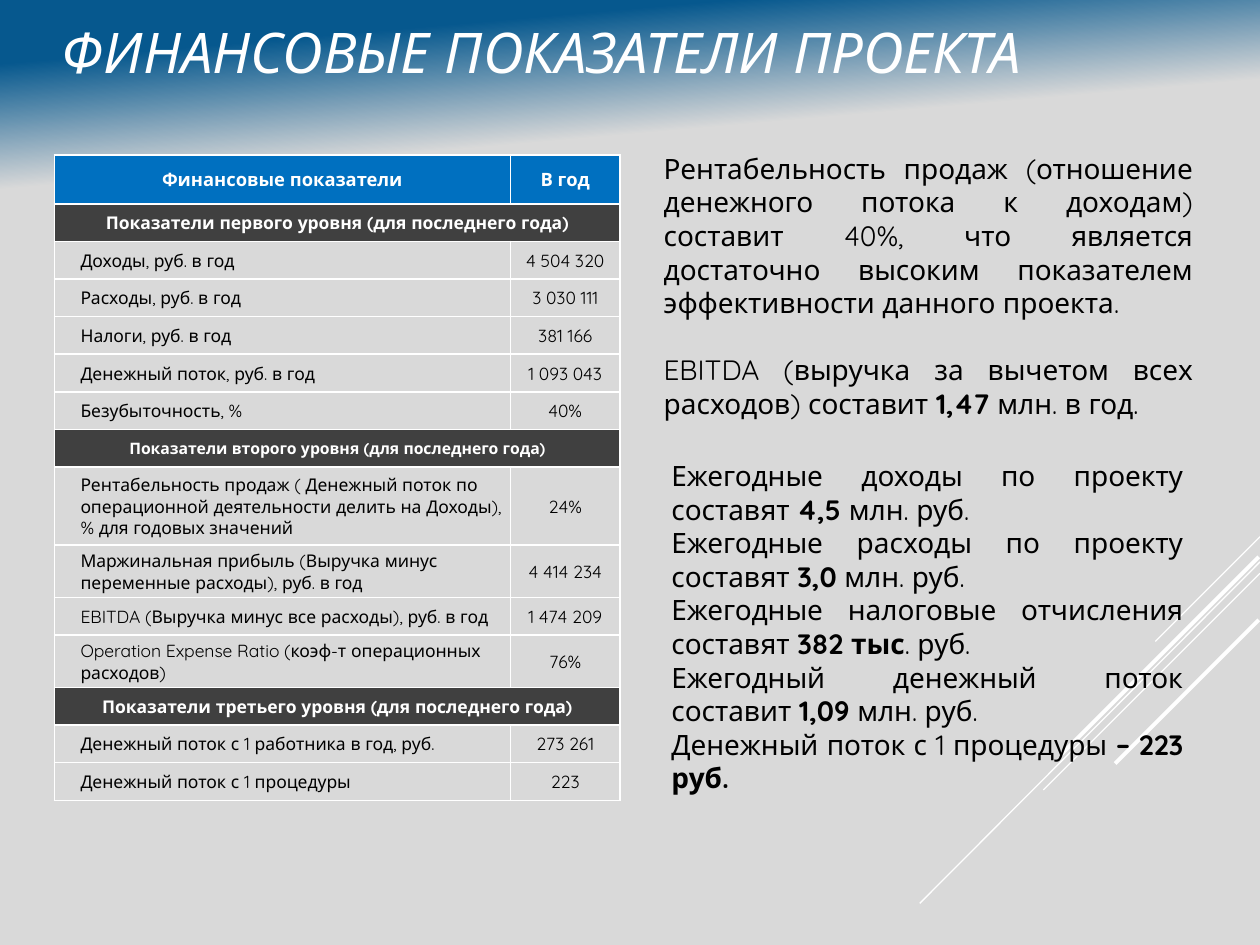
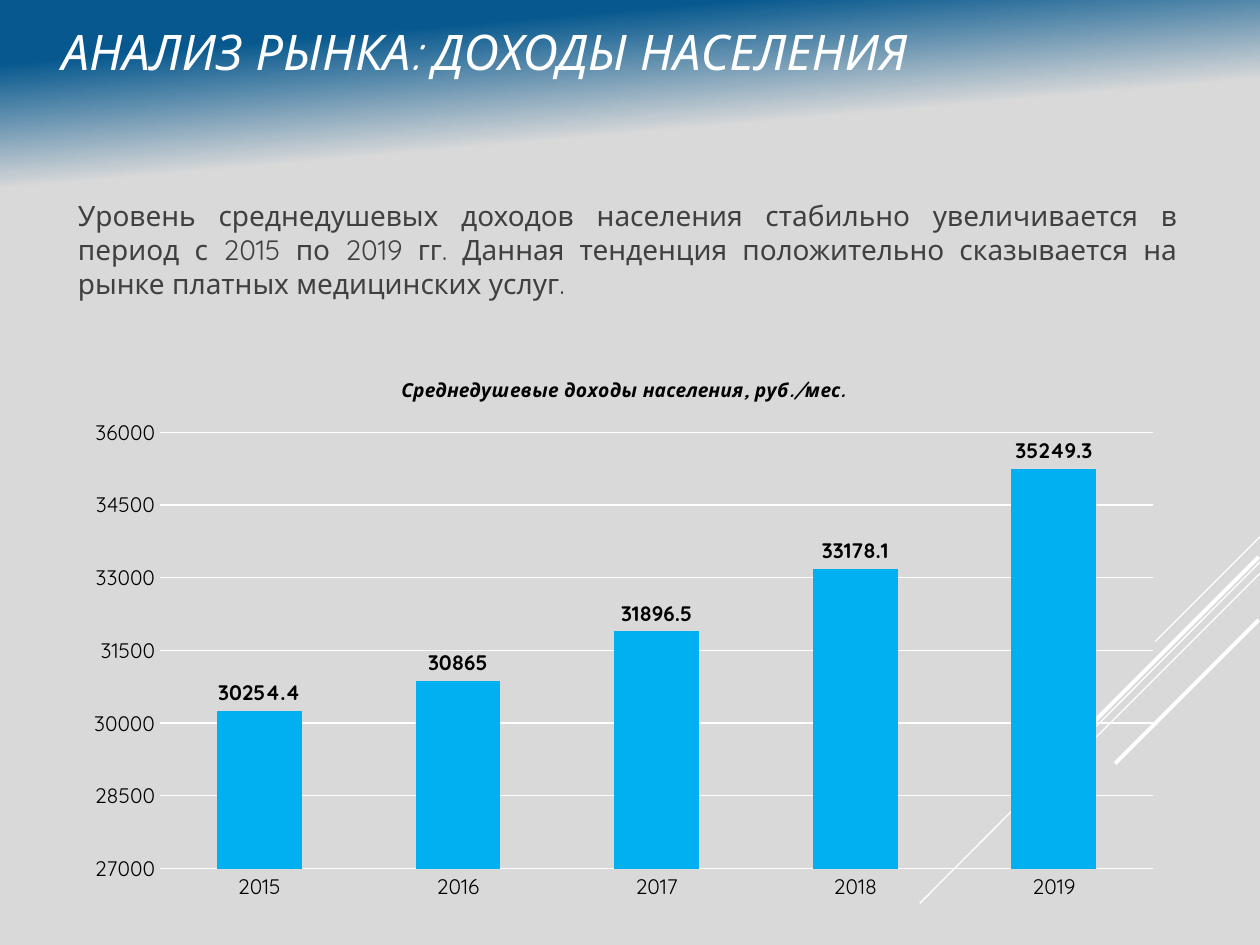
import pptx
import pptx.chart.data
import pptx.dml.color
import pptx.enum.chart
import pptx.enum.shapes
import pptx.enum.text
import pptx.oxml
import pptx.oxml.ns
import pptx.util

Pt = pptx.util.Pt
ALIGN = pptx.enum.text.PP_ALIGN
FONT = "Quicksand"
WHITE, BLACK, GRAY = "FFFFFF", "000000", "404040"
SKY, HEADER_BLUE, BAR_BLUE, BACKDROP = "06588E", "0070C0", "00B0F0", "D9D9D9"

RAYS = [
    (720, 306.7, 660.2, 366.5, 0.75),
    (720, 321.1, 525.6, 516.2, 0.75),
    (720, 327.6, 596.2, 451.4, 0.75),
    (719.3, 318.2, 606.2, 431.3, 2.25),
    (719.3, 354.2, 637.2, 436.3, 2.25),
]

INDICATORS = [
    ("Финансовые показатели", "В год", 28),
    ("Показатели первого уровня (для последнего года)", None, 21.5),
    ("Доходы, руб. в год", "4 504 320", 21.5),
    ("Расходы, руб. в год", "3 030 111", 21.5),
    ("Налоги, руб. в год", "381 166", 21.5),
    ("Денежный поток, руб. в год", "1 093 043", 21.5),
    ("Безубыточность, %", "40%", 21.5),
    ("Показатели второго уровня (для последнего года)", None, 21.5),
    ("Рентабельность продаж ( Денежный поток по операционной деятельности "
     "делить на Доходы), % для годовых значений", "24%", 44.5),
    ("Маржинальная прибыль (Выручка минус переменные расходы), руб. в год", "4 414 234", 30),
    ("EBITDA (Выручка минус все расходы), руб. в год", "1 474 209", 21.5),
    ("Operation Expense Ratio (коэф-т операционных расходов)", "76%", 30),
    ("Показатели третьего уровня (для последнего года)", None, 21.5),
    ("Денежный поток с 1 работника в год, руб.", "273 261", 21.5),
    ("Денежный поток с 1 процедуры", "223", 21.5),
]
SMALL_SECTION_ROW = 7

PROFITABILITY = [
    [("Рентабельность продаж (отношение денежного потока к доходам) составит 40%, "
      "что является достаточно высоким показателем эффективности данного проекта.", False)],
    [("EBITDA (выручка за вычетом всех расходов) составит ", False), ("1,47 ", True),
     ("млн. в год.", False)],
]
YEARLY_TOTALS = [
    [("Ежегодные доходы по проекту составят ", False), ("4,5 ", True), ("млн. руб.", False)],
    [("Ежегодные расходы по проекту составят ", False), ("3,0", True), (" млн. руб.", False)],
    [("Ежегодные налоговые отчисления составят ", False), ("382 тыс", True), (". руб.", False)],
    [("Ежегодный денежный поток составит ", False), ("1,09 ", True), ("млн. руб.", False)],
    [("Денежный поток с 1 процедуры ", False), ("– 223 руб.", True)],
]
INCOME_TREND = [
    [("Уровень среднедушевых доходов населения стабильно увеличивается в период с 2015 "
      "по 2019 гг. Данная тенденция положительно сказывается на рынке платных "
      "медицинских услуг.", False)],
]
INCOMES = {"2015": 30254.4, "2016": 30865, "2017": 31896.5, "2018": 33178.1, "2019": 35249.3}


def rgb(value):
    """Return the colour for a hex string."""
    return pptx.dml.color.RGBColor.from_string(value)


def drawing_xml(xml):
    """Return an element from markup that uses the a and c prefixes."""
    name, rest = xml[:xml.index(">")], xml[xml.index(">"):]
    return pptx.oxml.parse_xml(name + " " + pptx.oxml.ns.nsdecls("a", "c") + rest)


def style_font(font, size, color, bold=False, italic=False):
    """Apply the shared typeface with size, colour and weight."""
    font.name = FONT
    font.size = Pt(size)
    font.color.rgb = rgb(color)
    font.bold = bold
    font.italic = italic


def add_run(paragraph, text, size, color, bold=False, italic=False):
    """Append one formatted run."""
    run = paragraph.add_run()
    run.text = text
    style_font(run.font, size, color, bold, italic)


def place(shape, box):
    """Move a shape to a box of left, top, width and height."""
    shape.left, shape.top, shape.width, shape.height = (Pt(length) for length in box)


def add_rays(slide):
    """Draw the white diagonal rays at the lower right."""
    for start_x, start_y, end_x, end_y, width in RAYS:
        ray = slide.shapes.add_connector(
            pptx.enum.shapes.MSO_CONNECTOR.STRAIGHT,
            Pt(start_x), Pt(start_y), Pt(end_x), Pt(end_y))
        ray.line.color.rgb = rgb(WHITE)
        ray.line.width = Pt(width)
        ray.element.spPr.append(drawing_xml("<a:effectLst></a:effectLst>"))


def add_slide(presentation, title, title_size):
    """Add a slide with the gradient backdrop, rays and title."""
    slide = presentation.slides.add_slide(presentation.slide_layouts[5])
    fill = slide.background.fill
    fill.gradient()
    fill.gradient_angle = 275
    for stop, position, color in zip(fill.gradient_stops, (0.06, 0.18), (SKY, BACKDROP)):
        stop.position = position
        stop.color.rgb = rgb(color)
    add_rays(slide)

    heading = slide.shapes.title
    place(heading, (0, -2, 720, 62.5))
    frame = heading.text_frame
    frame.auto_size = pptx.enum.text.MSO_AUTO_SIZE.NONE
    frame.vertical_anchor = pptx.enum.text.MSO_ANCHOR.MIDDLE
    frame.margin_left = Pt(35.2)
    paragraph = frame.paragraphs[0]
    paragraph.alignment = ALIGN.LEFT
    add_run(paragraph, title, title_size, WHITE, italic=True)
    return slide


def add_text(slide, box, paragraphs, color=BLACK, gap=0):
    """Add justified text with a gap between paragraphs."""
    shape = slide.shapes.add_textbox(*(Pt(length) for length in box))
    frame = shape.text_frame
    frame.word_wrap = True
    for index, runs in enumerate(paragraphs):
        paragraph = frame.add_paragraph() if index else frame.paragraphs[0]
        paragraph.alignment = ALIGN.JUSTIFY
        if index:
            paragraph.space_before = Pt(gap)
        for text, bold in runs:
            add_run(paragraph, text, 16, color, bold)
    return frame


def add_borders(cell):
    """Give a cell white borders on all sides."""
    properties = cell._tc.get_or_add_tcPr()
    for index, side in enumerate(("lnL", "lnR", "lnT", "lnB")):
        properties.insert(index, drawing_xml(
            f'<a:{side} w="12700"><a:solidFill><a:srgbClr val="{WHITE}"/>'
            f"</a:solidFill></a:{side}>"))


def fill_cell(cell, text, fill, size, color, bold, centered):
    """Write and format one table cell."""
    cell.margin_left = Pt(0.7 if centered else 15)
    cell.margin_right = cell.margin_top = Pt(0.7)
    cell.margin_bottom = 0
    cell.vertical_anchor = pptx.enum.text.MSO_ANCHOR.MIDDLE
    if fill:
        cell.fill.solid()
        cell.fill.fore_color.rgb = rgb(fill)
    else:
        cell.fill.background()
    add_borders(cell)
    if text:
        paragraph = cell.text_frame.paragraphs[0]
        paragraph.alignment = ALIGN.CENTER if centered else ALIGN.LEFT
        add_run(paragraph, text, size, color, bold)


def add_indicator_table(slide, box):
    """Add the table of yearly indicators with its section rows."""
    table = slide.shapes.add_table(
        len(INDICATORS), 2, *(Pt(length) for length in box)).table
    table.first_row = table.horz_banding = False
    value_width = 62.6
    table.columns[0].width = Pt(box[2] - value_width)
    table.columns[1].width = Pt(value_width)
    for index, (label, value, height) in enumerate(INDICATORS):
        table.rows[index].height = Pt(height)
        cells = table.cell(index, 0), table.cell(index, 1)
        is_header, is_section = index == 0, value is None
        strong = is_header or is_section
        fill = HEADER_BLUE if is_header else GRAY if is_section else None
        size = 10.5 if is_header else 9 if index == SMALL_SECTION_ROW else 10
        for column, text in enumerate((label, value)):
            fill_cell(cells[column], text, fill, size, WHITE if strong else BLACK,
                      strong, strong or column == 1)
        if is_section:
            cells[0].merge(cells[1])


def style_axes(chart):
    """Format both axes and the gridlines."""
    for axis in (chart.category_axis, chart.value_axis):
        axis.major_tick_mark = axis.minor_tick_mark = pptx.enum.chart.XL_TICK_MARK.NONE
        style_font(axis.tick_labels.font, 12, BLACK)
    values = chart.value_axis
    values.minimum_scale, values.maximum_scale, values.major_unit = 27000, 36000, 1500
    values.format.line.fill.background()
    for line in (chart.category_axis.format.line, values.major_gridlines.format.line):
        line.color.rgb = rgb(WHITE)
        line.width = Pt(0.75)


def clear_and_fix_plot(chart):
    """Make the chart see-through and set the inner plot box."""
    plot_area = chart.element.chart.plotArea
    for layout in plot_area.findall(pptx.oxml.ns.qn("c:layout")):
        plot_area.remove(layout)
    sizes = "".join(f'<c:{name} val="{share}"/>' for name, share in
                    zip("xywh", (0.08, 0.14, 0.9, 0.78)))
    plot_area.insert(0, drawing_xml(
        '<c:layout><c:manualLayout><c:layoutTarget val="inner"/>'
        '<c:xMode val="edge"/><c:yMode val="edge"/>'
        f"{sizes}</c:manualLayout></c:layout>"))
    no_fill = "<c:spPr><a:noFill/><a:ln><a:noFill/></a:ln></c:spPr>"
    plot_area.append(drawing_xml(no_fill))
    chart.element.chart.addnext(drawing_xml(no_fill))


def add_income_chart(slide, box):
    """Add the column chart of income per head."""
    data = pptx.chart.data.CategoryChartData()
    data.categories = list(INCOMES)
    data.add_series("Series 1", list(INCOMES.values()))
    chart = slide.shapes.add_chart(
        pptx.enum.chart.XL_CHART_TYPE.COLUMN_CLUSTERED,
        *(Pt(length) for length in box), data).chart
    style_font(chart.font, 10, WHITE)
    chart.has_legend = False
    chart.has_title = True
    add_run(chart.chart_title.text_frame.paragraphs[0],
            "Среднедушевые доходы населения, руб./мес.", 11, BLACK, True, True)
    chart.chart_title.include_in_layout = False
    style_axes(chart)

    plot = chart.plots[0]
    plot.vary_by_categories = False
    plot.gap_width, plot.overlap = 134, -27
    series = plot.series[0]
    series.format.fill.solid()
    series.format.fill.fore_color.rgb = rgb(BAR_BLUE)
    labels = series.data_labels
    labels.show_value = True
    labels.position = pptx.enum.chart.XL_LABEL_POSITION.OUTSIDE_END
    style_font(labels.font, 12, BLACK, True)
    clear_and_fix_plot(chart)


def build_finance_slide(presentation):
    """Build the slide with the indicator table and its conclusions."""
    slide = add_slide(presentation, "ФИНАНСОВЫЕ ПОКАЗАТЕЛИ ПРОЕКТА", 32)
    add_indicator_table(slide, (31, 88.5, 323.3, 369))
    add_text(slide, (376.6, 258.5, 306.7, 201), YEARLY_TOTALS)
    add_text(slide, (372.2, 83, 316.8, 162.7), PROFITABILITY, gap=19.2)


def build_market_slide(presentation):
    """Build the slide with the income trend and its chart."""
    slide = add_slide(presentation, "АНАЛИЗ РЫНКА: ДОХОДЫ НАСЕЛЕНИЯ", 28)
    frame = add_text(slide, (32.4, 88.5, 648, 108), INCOME_TREND, GRAY)
    frame.vertical_anchor = pptx.enum.text.MSO_ANCHOR.MIDDLE
    frame.margin_left = Pt(12.2)
    frame.paragraphs[0].space_before = Pt(3.2)
    frame.paragraphs[0].space_after = Pt(6)
    add_income_chart(slide, (41, 202.3, 630.7, 319.7))


def main():
    """Build and save the presentation."""
    presentation = pptx.Presentation()
    presentation.slide_width, presentation.slide_height = Pt(720), Pt(540)
    build_finance_slide(presentation)
    build_market_slide(presentation)
    presentation.save("out.pptx")


if __name__ == "__main__":
    main()
